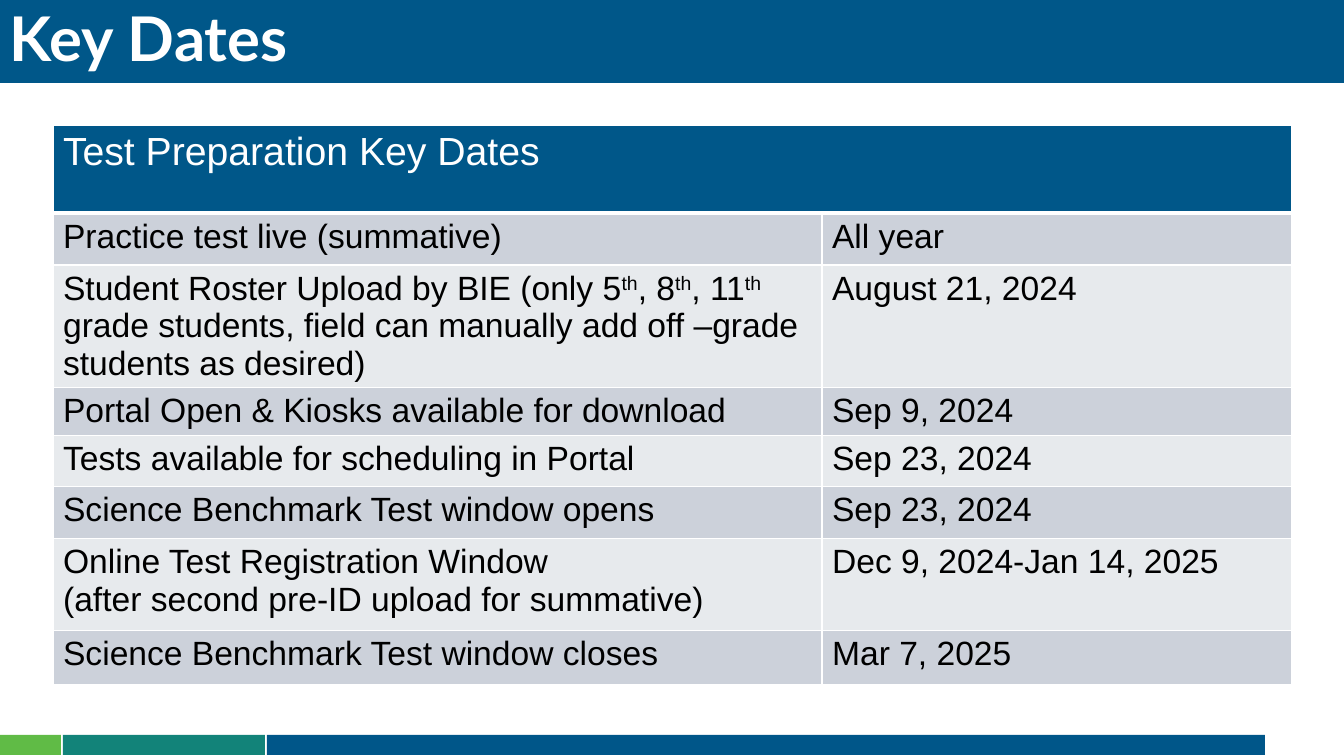
import pptx
import pptx.dml.color
import pptx.enum.shapes
import pptx.enum.text
import pptx.oxml
import pptx.oxml.ns
import pptx.util

# Content: "^" marks switch superscript on and off, a list entry is a paragraph
TITLE = "Key Dates"
HEADING = "Test Preparation Key Dates"
DATES = [
    (["Practice test live (summative)"], "All year"),
    (["Student Roster Upload by BIE (only 5^th^, 8^th^, 11^th^ grade students, "
      "field can manually add off –grade students as desired)"], "August 21, 2024"),
    (["Portal Open & Kiosks available for download"], "Sep 9, 2024"),
    (["Tests available for scheduling in Portal"], "Sep 23, 2024"),
    (["Science Benchmark Test window opens"], "Sep 23, 2024"),
    (["Online Test Registration Window",
      "(after second pre-ID upload for summative)"], "Dec 9, 2024-Jan 14, 2025"),
    (["Science Benchmark Test window closes"], "Mar 7, 2025"),
]

THEME = {
    "blue": "005789", "footer": ["60BB46", "128379", "005689"],
    "bands": ["CCD1DA", "E7EAED"], "white": "FFFFFF", "black": "000000",
    "title_font": "Lato", "body_font": "Arial",
    "title_size": 44, "heading_size": 28, "body_size": 24,
}

# Layout in px
SLIDE_W, SLIDE_H = 1344, 756
TITLE_H = 83
TABLE_X, TABLE_Y = 53, 125
COLUMNS = [769, 470]
ROWS = [88, 52, 122, 48, 51, 52, 92, 54]
FOOTER_Y, FOOTER_H, FOOTER_GAP = 735, 20, 2
FOOTER_WIDTHS = [61, 202, 998]


def px(n):
    return pptx.util.Emu(round(n * 914400 / 100.8))


def rgb(value):
    return pptx.dml.color.RGBColor.from_string(value)


def add_bar(s, x, y, w, h, color):
    sp = s.shapes.add_shape(pptx.enum.shapes.MSO_SHAPE.RECTANGLE,
                            px(x), px(y), px(w), px(h))
    sp.shadow.inherit = False
    sp.fill.solid()
    sp.fill.fore_color.rgb = rgb(color)
    sp.line.fill.background()
    return sp


def style(p, font, size, color, bold=False):
    p.alignment = pptx.enum.text.PP_ALIGN.LEFT
    p.font.name = font
    p.font.size = pptx.util.Pt(size)
    p.font.bold = bold
    p.font.color.rgb = rgb(color)


def set_borders(cell, top, bottom):
    tcPr = cell._tc.get_or_add_tcPr()
    for i, (side, width) in enumerate(zip("LRTB", (1, 1, top, bottom))):
        tcPr.insert(i, pptx.oxml.parse_xml(
            f'<a:ln{side} {pptx.oxml.ns.nsdecls("a")} w="{pptx.util.Pt(width)}">'
            f'<a:solidFill><a:srgbClr val="{THEME["white"]}"/></a:solidFill>'
            f'</a:ln{side}>'))


def fill_cell(cell, paragraphs, size, color, fill):
    cell.fill.solid()
    cell.fill.fore_color.rgb = rgb(fill)
    tf = cell.text_frame
    for i, text in enumerate(paragraphs):
        p = tf.add_paragraph() if i else tf.paragraphs[0]
        for j, part in enumerate(text.split("^")):
            r = p.add_run()
            r.text = part
            if j % 2:
                r._r.get_or_add_rPr().set("baseline", "30000")
        style(p, THEME["body_font"], size, color)


def main():
    prs = pptx.Presentation()
    prs.slide_width, prs.slide_height = px(SLIDE_W), px(SLIDE_H)
    s = prs.slides.add_slide(prs.slide_layouts[6])

    # Footer stripes
    x = 0
    for width, color in zip(FOOTER_WIDTHS, THEME["footer"]):
        add_bar(s, x, FOOTER_Y, width, FOOTER_H, color)
        x += width + FOOTER_GAP

    # Title band
    tf = add_bar(s, 0, 0, SLIDE_W, TITLE_H, THEME["blue"]).text_frame
    tf.word_wrap = True
    tf.vertical_anchor = pptx.enum.text.MSO_ANCHOR.MIDDLE
    p = tf.paragraphs[0]
    p.text = TITLE
    p.line_spacing = 0.9
    style(p, THEME["title_font"], THEME["title_size"], THEME["white"], bold=True)

    # Table of dates
    table = s.shapes.add_table(len(ROWS), len(COLUMNS), px(TABLE_X), px(TABLE_Y),
                               px(sum(COLUMNS)), px(sum(ROWS))).table
    table.first_row = table.horz_banding = False
    for column, width in zip(table.columns, COLUMNS):
        column.width = px(width)
    for row, height in zip(table.rows, ROWS):
        row.height = px(height)

    table.cell(0, 0).merge(table.cell(0, 1))
    fill_cell(table.cell(0, 0), [HEADING], THEME["heading_size"],
              THEME["white"], THEME["blue"])
    for i, (event, date) in enumerate(DATES):
        for j, paragraphs in enumerate((event, [date])):
            fill_cell(table.cell(i + 1, j), paragraphs, THEME["body_size"],
                      THEME["black"], THEME["bands"][i % 2])
    for i, row in enumerate(table.rows):
        for cell in row.cells:
            set_borders(cell, top=3 if i == 1 else 1, bottom=3 if i == 0 else 1)

    prs.save("out.pptx")


if __name__ == "__main__":
    main()
